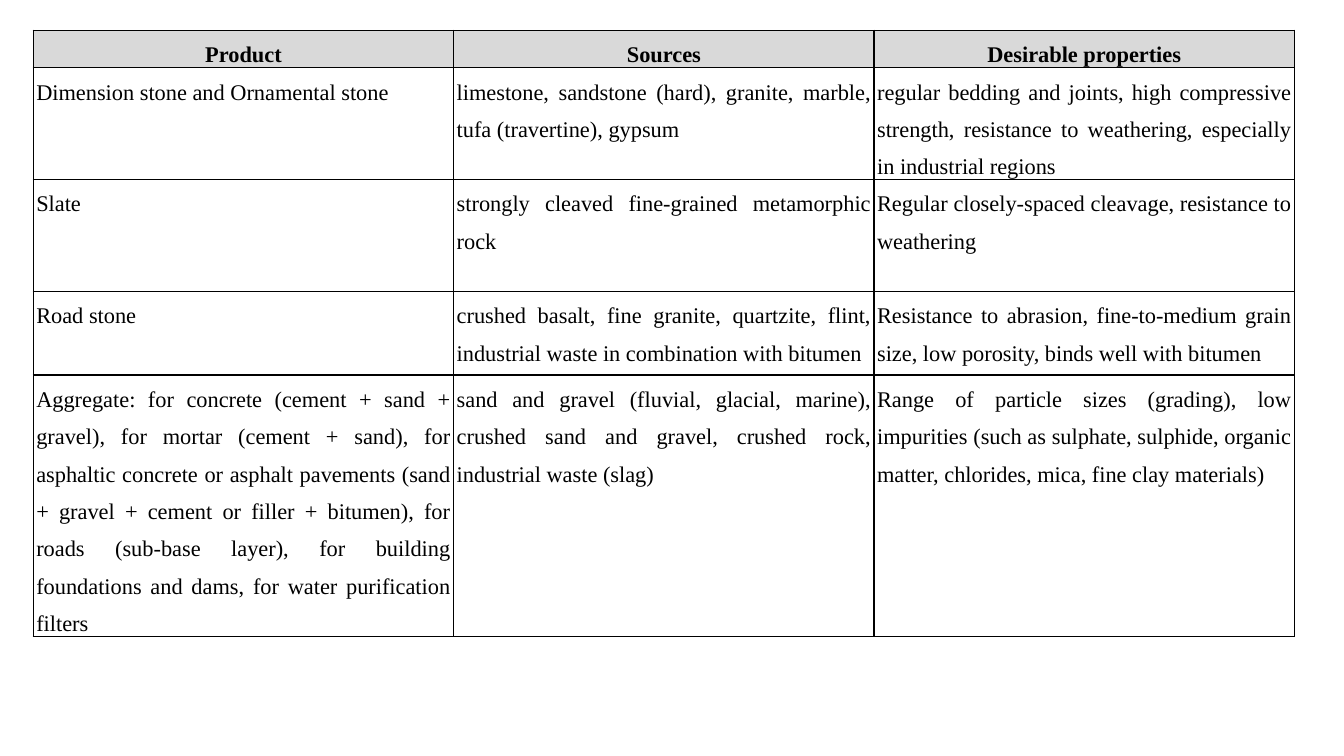
import pptx
import pptx.dml.color
import pptx.enum.text
import pptx.oxml
import pptx.oxml.ns
import pptx.util
from pptx.util import Inches

BLACK = pptx.dml.color.RGBColor(0x00, 0x00, 0x00)
HEADER_GREY = pptx.dml.color.RGBColor(0xD9, 0xD9, 0xD9)
FONT_NAME = "Times New Roman"
COLUMN_WIDTH = 4.17
ROW_HEIGHTS = [0.37, 1.11, 1.11, 0.83, 2.59]

STONE_PRODUCTS = [
    ["Product", "Sources", "Desirable properties"],
    [
        "Dimension stone and Ornamental stone",
        "limestone, sandstone (hard), granite, marble, tufa (travertine), gypsum",
        "regular bedding and joints, high compressive strength, resistance to "
        "weathering, especially in industrial regions",
    ],
    [
        "Slate",
        "strongly cleaved fine-grained metamorphic rock",
        "Regular closely-spaced cleavage, resistance to weathering",
    ],
    [
        "Road stone",
        "crushed basalt, fine granite, quartzite, flint, industrial waste in "
        "combination with bitumen",
        "Resistance to abrasion, fine-to-medium grain size, low porosity, "
        "binds well with bitumen",
    ],
    [
        "Aggregate: for concrete (cement + sand + gravel), for mortar (cement + "
        "sand), for asphaltic concrete or asphalt pavements (sand + gravel + "
        "cement or filler + bitumen), for roads (sub-base layer), for building "
        "foundations and dams, for water purification filters",
        "sand and gravel (fluvial, glacial, marine), crushed sand and gravel, "
        "crushed rock, industrial waste (slag)",
        "Range of particle sizes (grading), low impurities (such as sulphate, "
        "sulphide, organic matter, chlorides, mica, fine clay materials)",
    ],
]


def add_borders(cell):
    properties = cell._tc.get_or_add_tcPr()
    for side in ("lnL", "lnR", "lnT", "lnB"):
        properties.append(pptx.oxml.parse_xml(
            f'<a:{side} {pptx.oxml.ns.nsdecls("a")} w="{pptx.util.Pt(1)}">'
            f'<a:solidFill><a:srgbClr val="{BLACK}"/></a:solidFill></a:{side}>'
        ))


def fill_cell(cell, text, is_header):
    add_borders(cell)
    cell.margin_left = cell.margin_right = Inches(0.03)
    cell.margin_top = cell.margin_bottom = Inches(0)
    if is_header:
        cell.fill.solid()
        cell.fill.fore_color.rgb = HEADER_GREY
    else:
        cell.fill.background()

    cell.text_frame.text = text
    para = cell.text_frame.paragraphs[0]
    alignments = pptx.enum.text.PP_ALIGN
    para.alignment = alignments.CENTER if is_header else alignments.JUSTIFY
    para.line_spacing = 1.5
    font = para.runs[0].font
    font.name = FONT_NAME
    font.size = pptx.util.Pt(16)
    font.bold = is_header
    font.color.rgb = BLACK


def add_text_table(page, rows, left, top):
    """Add a table whose first row is a shaded header."""
    column_count = len(rows[0])
    table = page.shapes.add_table(
        len(rows), column_count, Inches(left), Inches(top),
        Inches(COLUMN_WIDTH * column_count), Inches(sum(ROW_HEIGHTS)),
    ).table
    table.horz_banding = False
    for column in table.columns:
        column.width = Inches(COLUMN_WIDTH)
    for row_index, texts in enumerate(rows):
        table.rows[row_index].height = Inches(ROW_HEIGHTS[row_index])
        for column_index, text in enumerate(texts):
            fill_cell(table.cell(row_index, column_index), text, row_index == 0)


def main():
    deck = pptx.Presentation()
    deck.slide_width = Inches(13.33)
    deck.slide_height = Inches(7.5)
    page = deck.slides.add_slide(deck.slide_layouts.get_by_name("Blank"))
    add_text_table(page, STONE_PRODUCTS, left=0.33, top=0.3)
    deck.save("out.pptx")


if __name__ == "__main__":
    main()
